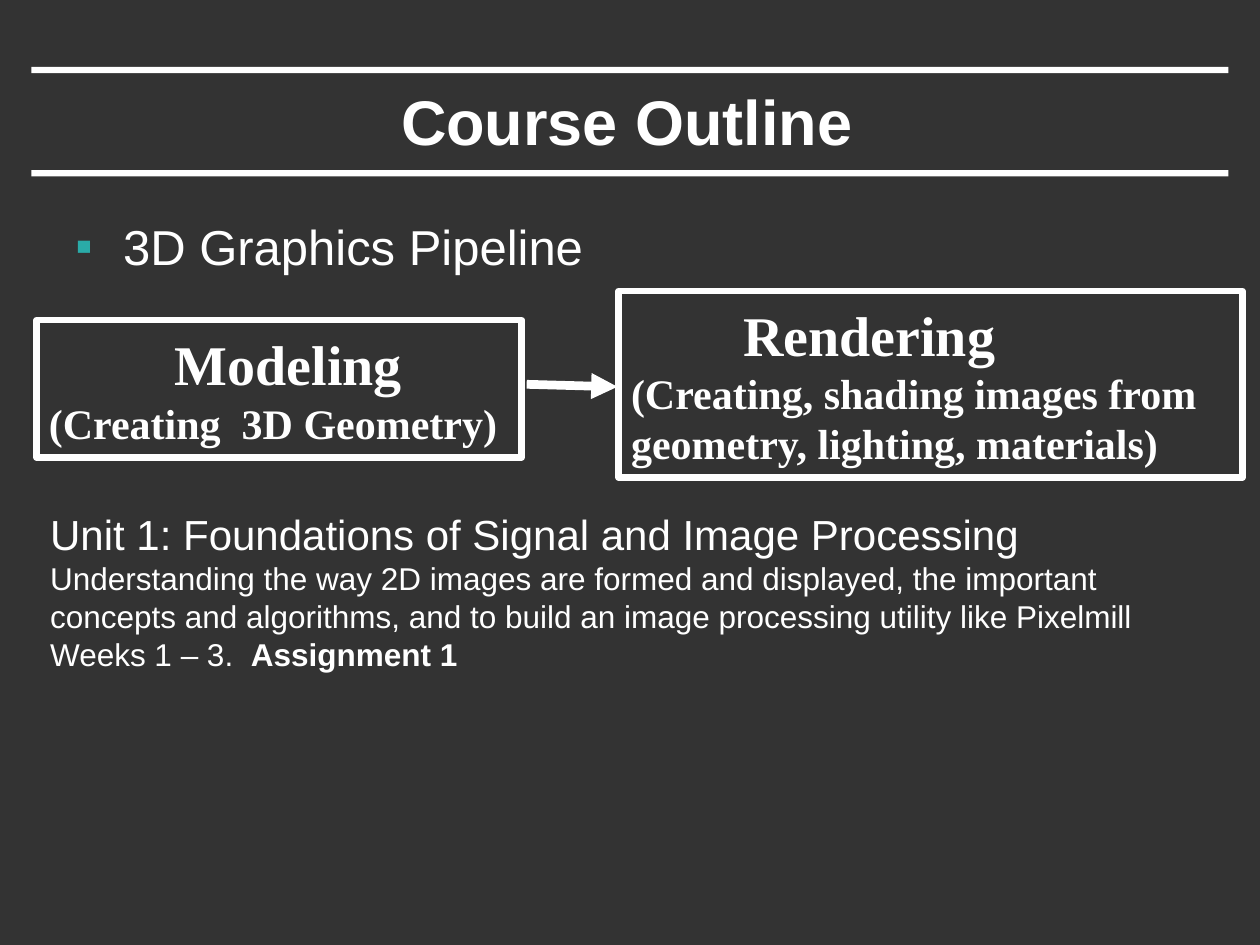
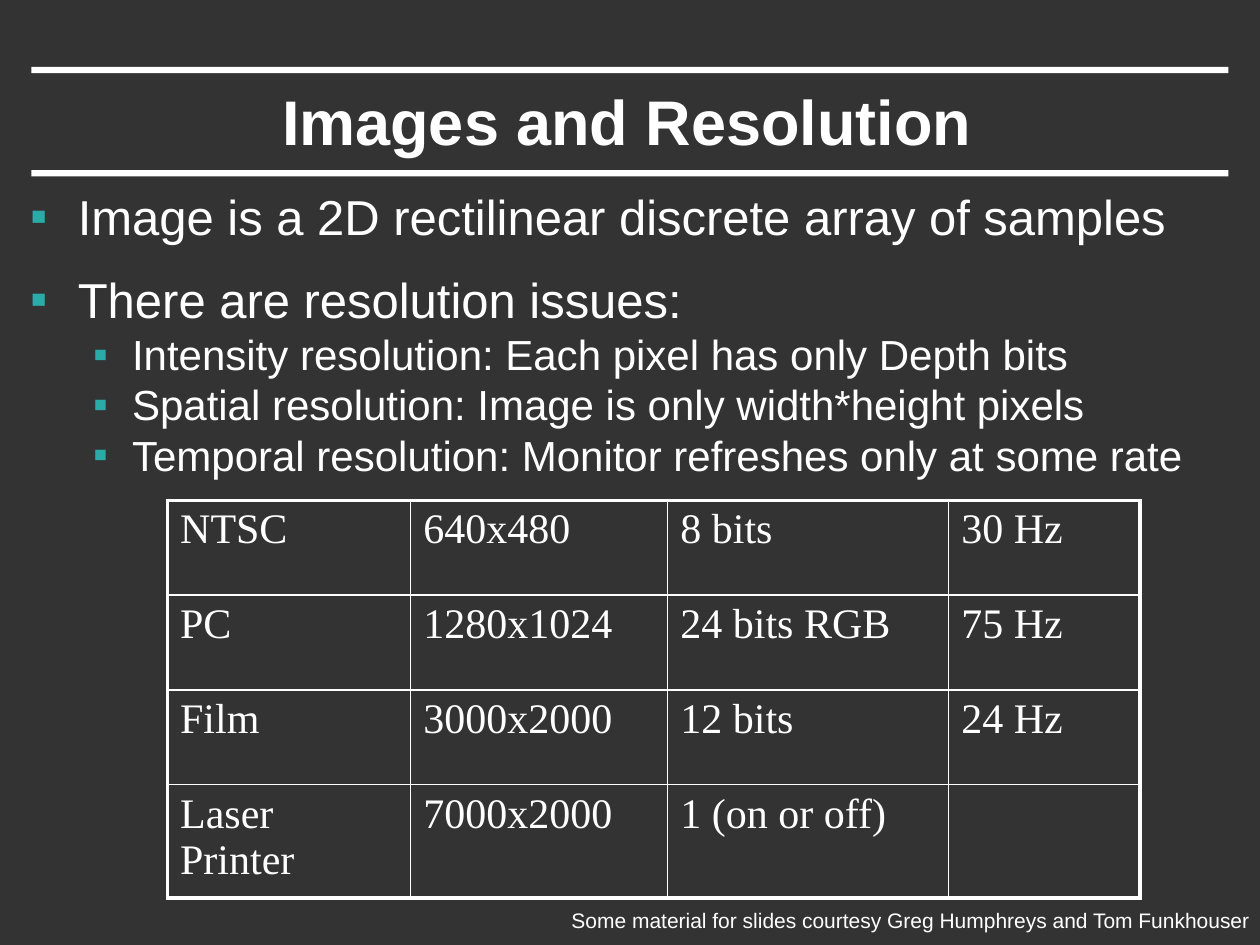
from lxml import etree
from pptx import Presentation, util as u
from pptx.dml import color
from pptx.enum import shapes, text
from pptx.oxml import ns

WHITE, DARK, TEAL = "FFFFFF", "333333", "2AABA8"
SANS, SERIF = "Arial", "Times New Roman"


def rgb(hex_value):
    return color.RGBColor.from_string(hex_value)


def add_run(p, words, size, font=SANS, bold=False):
    r = p.add_run()
    r.text = words
    r.font.size, r.font.name, r.font.bold = u.Pt(size), font, bold
    r.font.color.rgb = rgb(WHITE)


prs = Presentation()
prs.slide_width, prs.slide_height = u.Inches(10), u.Inches(7.5)

# Shared background, set on the title-only layout
layout = prs.slide_layouts[5]
layout.background.fill.solid()
layout.background.fill.fore_color.rgb = rgb(DARK)

# Titles
for title in ("Course Outline", "Images and Resolution"):
    s = prs.slides.add_slide(layout)
    sp = s.shapes.title
    sp.left, sp.top = u.Inches(0.74), u.Inches(0.58)
    sp.width, sp.height = u.Inches(8.47), u.Inches(0.75)
    sp.text_frame.vertical_anchor = text.MSO_ANCHOR.MIDDLE
    p = sp.text_frame.paragraphs[0]
    p.alignment = text.PP_ALIGN.CENTER
    add_run(p, title, 36, bold=True)
outline, resolution = prs.slides

# Bars above and below the title, moved to the layout
for number, top in enumerate((0.53, 1.35)):
    bar = outline.shapes.add_shape(shapes.MSO_SHAPE.RECTANGLE, u.Inches(0.25),
                                   u.Inches(top), u.Inches(9.5), u.Inches(0.05))
    bar.shadow.inherit = False
    bar.fill.solid()
    bar.fill.fore_color.rgb = rgb(WHITE)
    bar.line.fill.background()
    bar.element.nvSpPr.cNvPr.set("id", str(20 + number))
    layout.shapes.element.append(bar.element)

# Bulleted lists: (level, words)
bullet_lists = [
    (outline, 0.5, 1.67, 9, [(0, "3D Graphics Pipeline")]),
    (resolution, 0.14, 1.43, 9.76, [
        (0, "Image is a 2D rectilinear discrete array of samples"),
        (0, "There are resolution issues:"),
        (1, "Intensity resolution: Each pixel has only Depth bits"),
        (1, "Spatial resolution: Image is only width*height pixels"),
        (1, "Temporal resolution: Monitor refreshes only at some rate")]),
]
level_styles = [(28, 0.38, -0.38), (24, 0.81, -0.31)]  # size, margin, indent
for s, left, top, width, items in bullet_lists:
    tf = s.shapes.add_textbox(u.Inches(left), u.Inches(top),
                              u.Inches(width), u.Inches(5.5)).text_frame
    tf.word_wrap = True
    for i, (level, words) in enumerate(items):
        p = tf.add_paragraph() if i else tf.paragraphs[0]
        size, margin, indent = level_styles[level]
        p.level = level
        p.space_before = u.Pt(14 if i and level == 0 else 0)
        pPr = p._p.get_or_add_pPr()
        pPr.set("marL", str(u.Inches(margin)))
        pPr.set("indent", str(u.Inches(indent)))
        clr = etree.SubElement(pPr, ns.qn("a:buClr"))
        etree.SubElement(clr, ns.qn("a:srgbClr"), val=TEAL)
        etree.SubElement(pPr, ns.qn("a:buFont"), typeface=SANS)
        etree.SubElement(pPr, ns.qn("a:buChar"), char="▪")
        add_run(p, words, size)

# Slide 1: arrow between the pipeline stages
arrow = outline.shapes.add_connector(shapes.MSO_CONNECTOR.STRAIGHT, u.Inches(4.18),
                                     u.Inches(3.05), u.Inches(4.9), u.Inches(3.07))
arrow.line.color.rgb = rgb(WHITE)
arrow.line.width = u.Pt(5)
etree.SubElement(arrow.line._get_or_add_ln(), ns.qn("a:tailEnd"), type="triangle")
etree.SubElement(arrow.element.spPr, ns.qn("a:effectLst"))

# Slide 1: pipeline stages, with the heading indented
stages = [
    (4.91, 2.31, 4.95, 1.48, 0.89, "Rendering",
     "(Creating, shading images from geometry, lighting, materials)"),
    (0.29, 2.54, 3.85, 1.09, 1, "Modeling", "(Creating  3D Geometry)"),
]
for left, top, width, height, indent, heading, detail in stages:
    sp = outline.shapes.add_shape(shapes.MSO_SHAPE.RECTANGLE, u.Inches(left),
                                  u.Inches(top), u.Inches(width), u.Inches(height))
    sp.shadow.inherit = False
    sp.fill.background()
    sp.line.color.rgb = rgb(WHITE)
    sp.line.width = u.Pt(3.75)
    tf = sp.text_frame
    tf.word_wrap = True
    tf.vertical_anchor = text.MSO_ANCHOR.MIDDLE
    p = tf.paragraphs[0]
    p._p.get_or_add_pPr().set("indent", str(u.Inches(indent)))
    add_run(p, heading, 32, SERIF, True)
    add_run(tf.add_paragraph(), detail, 24, SERIF, True)
    for p in tf.paragraphs:
        p.alignment = text.PP_ALIGN.LEFT

# Slide 1: unit description
tf = outline.shapes.add_textbox(u.Inches(0.3), u.Inches(3.99),
                                u.Inches(9.47), u.Inches(1.72)).text_frame
tf.word_wrap = True
add_run(tf.paragraphs[0], "Unit 1: Foundations of Signal and Image Processing", 24)
add_run(tf.add_paragraph(),
        "Understanding the way 2D images are formed and displayed, the important "
        "concepts and algorithms, and to build an image processing utility like "
        "Pixelmill", 18)
p = tf.add_paragraph()
add_run(p, "Weeks 1 – 3.  ", 18)
add_run(p, "Assignment 1", 18, bold=True)

# Slide 2: table of devices, with a heavier outer border
devices = [
    ("NTSC", "640x480", "8 bits", "30 Hz"),
    ("PC", "1280x1024", "24 bits RGB", "75 Hz"),
    ("Film", "3000x2000", "12 bits", "24 Hz"),
    ("Laser Printer", "7000x2000", "1 (on or off)", ""),
]
col_widths = [1.93, 2.04, 2.23, 1.52]
table = resolution.shapes.add_table(4, 4, u.Inches(1.33), u.Inches(3.97),
                                    u.Inches(7.72), u.Inches(3.01)).table
table.first_row = table.horz_banding = False
for col, width in zip(table.columns, col_widths):
    col.width = u.Inches(width)
for i, row in enumerate(devices):
    for j, words in enumerate(row):
        cell = table.cell(i, j)
        tcPr = cell._tc.get_or_add_tcPr()
        outer = {"L": j == 0, "R": j == 3, "T": i == 0, "B": i == 3}
        for side, is_outer in outer.items():
            ln = etree.SubElement(tcPr, ns.qn("a:ln" + side),
                                  w=str(u.Pt(2.25 if is_outer else 1)))
            fill = etree.SubElement(ln, ns.qn("a:solidFill"))
            etree.SubElement(fill, ns.qn("a:srgbClr"), val=WHITE)
        cell.fill.background()
        if words:
            add_run(cell.text_frame.paragraphs[0], words, 24, SERIF)

# Slide 2: credit line
tf = resolution.shapes.add_textbox(u.Inches(4.41), u.Inches(7.15),
                                   u.Inches(5.64), u.Inches(0.3)).text_frame
tf.word_wrap = False
p = tf.paragraphs[0]
p.alignment = text.PP_ALIGN.CENTER
add_run(p, "Some material for slides courtesy Greg Humphreys and Tom Funkhouser", 12)

prs.save("out.pptx")
